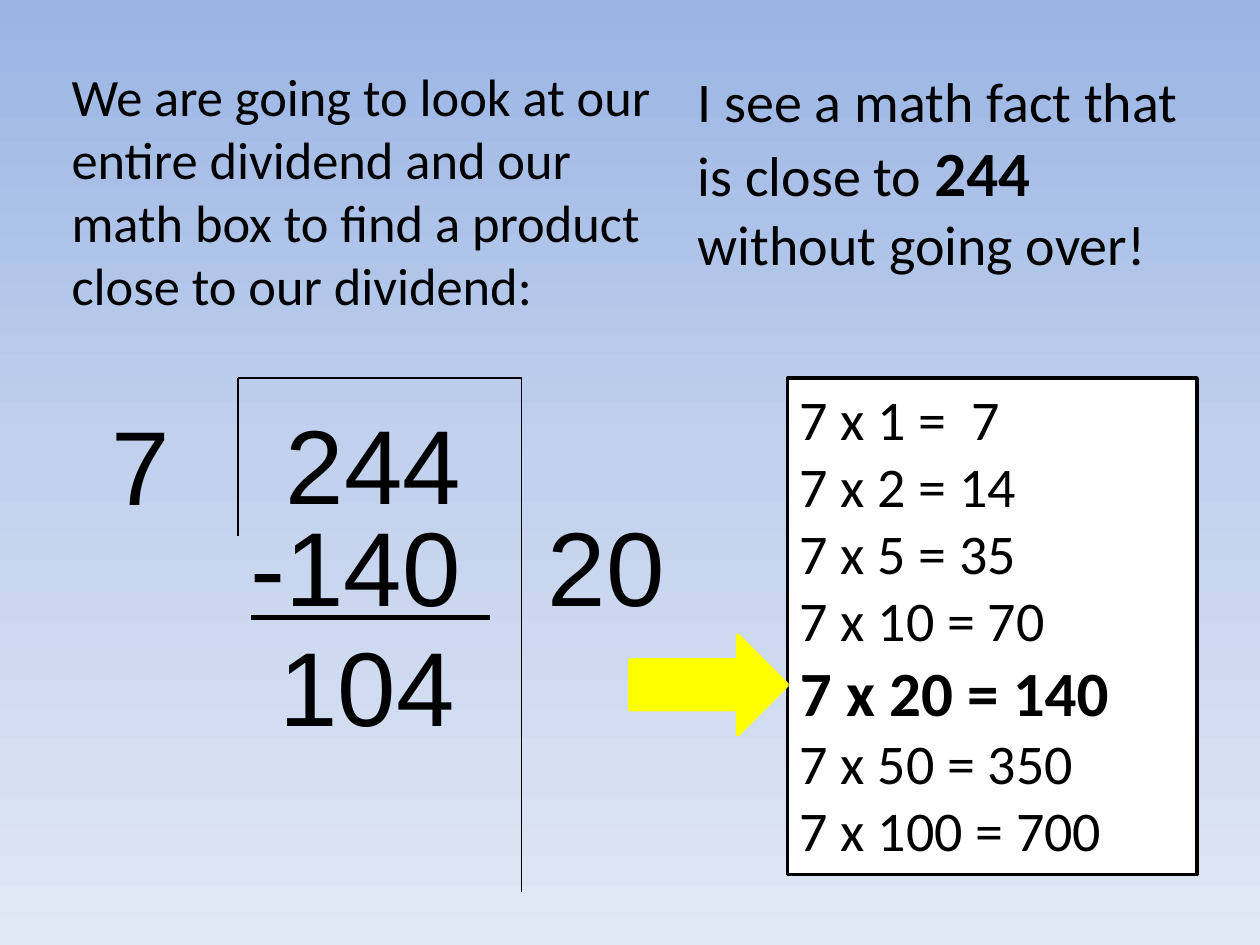
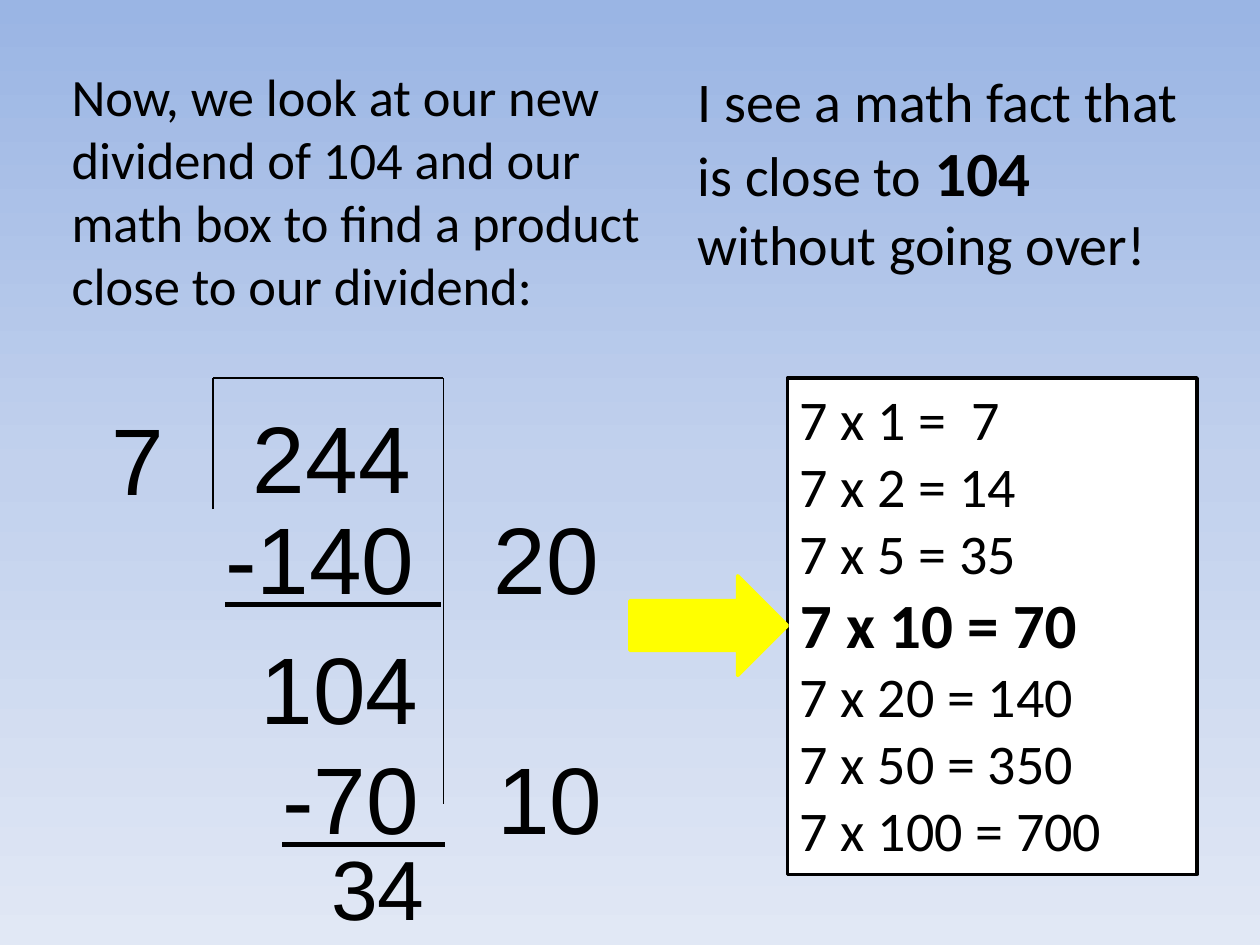
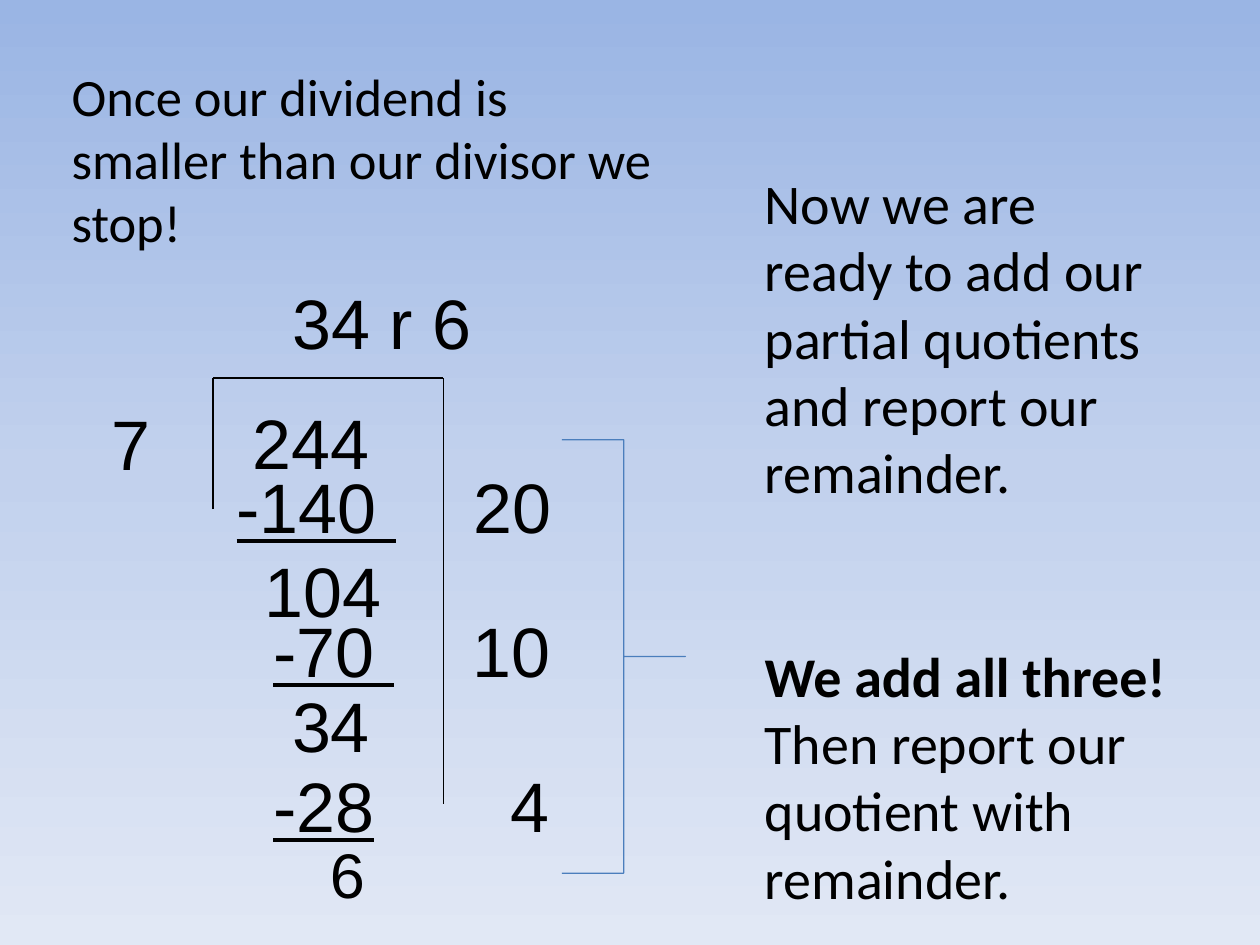
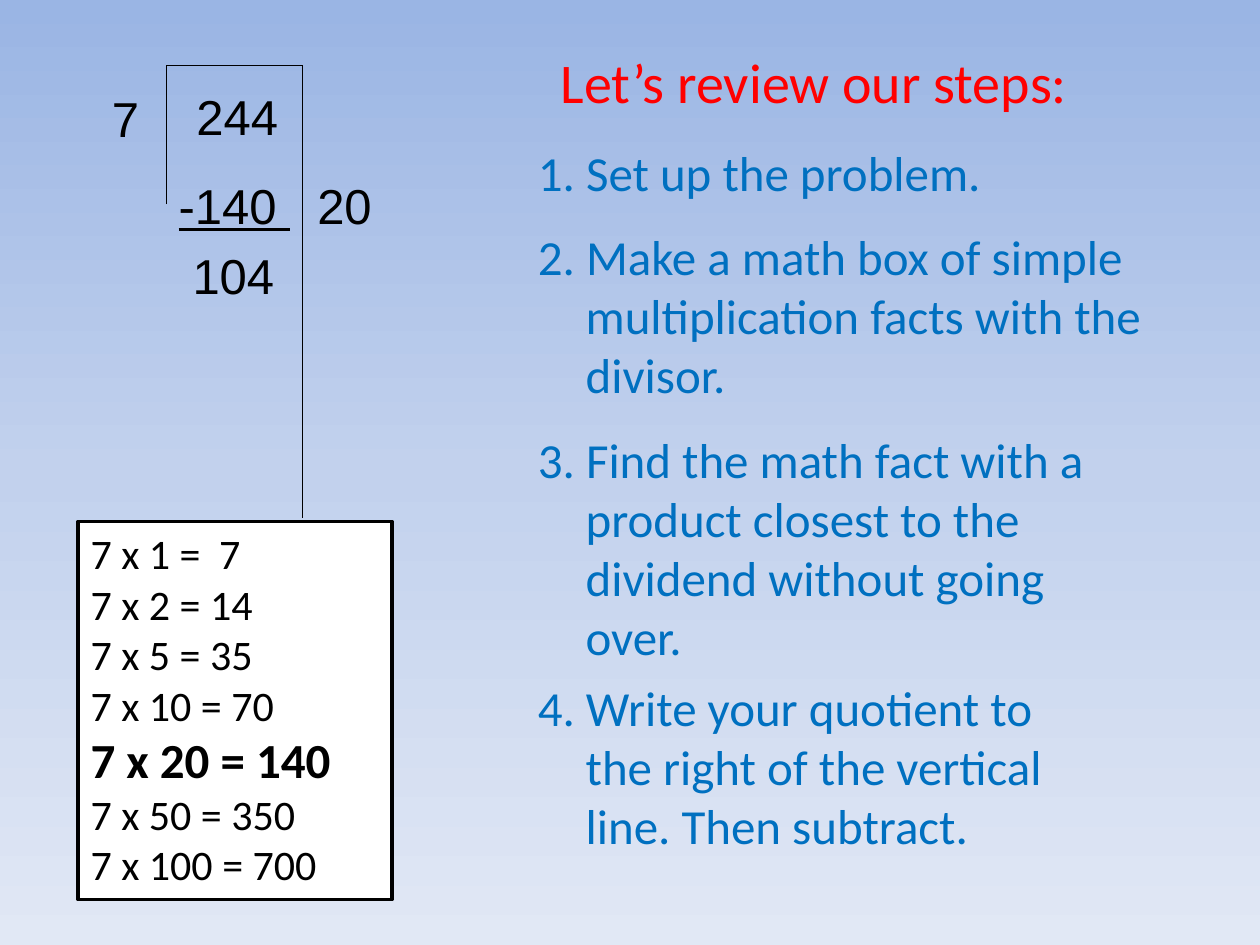
from dataclasses import dataclass

from lxml import etree
from pptx import Presentation
from pptx.dml.color import RGBColor
from pptx.enum.shapes import MSO_CONNECTOR, MSO_SHAPE
from pptx.enum.text import MSO_ANCHOR, PP_ALIGN
from pptx.oxml.ns import qn
from pptx.util import Inches, Pt

# The slide is a grid of 10 columns and 7.5 rows of square cells.
COLUMNS, ROWS = 10, 7.5
CELL = Inches(1)
BLANK_LAYOUT = 6

RECTANGLE = MSO_SHAPE.RECTANGLE
RIGHT_ARROW = MSO_SHAPE.RIGHT_ARROW
RIGHT_BRACE = MSO_SHAPE.RIGHT_BRACE
STRAIGHT = MSO_CONNECTOR.STRAIGHT
TOP = MSO_ANCHOR.TOP
LEFT, CENTER = PP_ALIGN.LEFT, PP_ALIGN.CENTER

COLORS = {
    "text": "000000", "paper": "FFFFFF", "arrow": "FFFF00",
    "brace": "4B7EBC", "title": "FF0000", "step": "0070C0",
}
BACKGROUND = {0: "9AB5E4", 50: "C2D1ED", 100: "E1E8F5"}
WORDS, DIGITS = "Calibri", "Arial"
FACTORS = (1, 2, 5, 10, 20, 50, 100)
DIVISOR, DIVIDEND = 7, 244


@dataclass(frozen=True)
class Area:
    left: float
    top: float
    width: float
    height: float

    def emu(self) -> list[int]:
        return [round(cells * CELL)
                for cells in (self.left, self.top, self.width, self.height)]


@dataclass(frozen=True)
class Span:
    text: str
    size: float = 0
    bold: bool = False
    underline: bool = False


@dataclass(frozen=True)
class Division:
    """The division frame, with the divisor outside and the dividend inside."""
    left: float
    top: float
    right: float
    bottom: float
    hook_bottom: float
    dividend_left: float
    size: float


@dataclass(frozen=True)
class WorkLine:
    """A line of the subtraction, with its partial quotient at a tab stop."""
    text: str
    left: float
    top: float
    size: float
    quotient: str = ""
    tab: float = 0


@dataclass(frozen=True)
class Step:
    text: str
    area: Area


EXPLANATION = Area(0.47, 0.46, 4.97, 2.21)
HINT = Area(5.44, 0.48, 4.06, 1.78)
LARGE_MATH_BOX = Area(6.25, 3, 3.25, 3.94)
SMALL_MATH_BOX = Area(0.62, 4.14, 2.49, 3)

STEPS = (
    Step("1. Set up the problem.", Area(4.17, 1.08, 5.25, 0.67)),
    Step("2. Make a math box of simple multiplication facts with the divisor.",
         Area(4.17, 1.75, 5.25, 1.92)),
    Step("3. Find the math fact with a product closest to the dividend "
         "without going over.", Area(4.17, 3.36, 4.71, 2.29)),
    Step("4. Write your quotient to the right of the vertical line. "
         "Then subtract.", Area(4.17, 5.33, 4.67, 1.58)),
)


def rgb(name: str) -> RGBColor:
    return RGBColor.from_string(COLORS[name])


def paint_background(master) -> None:
    fill = master.background.fill
    fill.gradient()
    fill.gradient_angle = 270
    stops = master.element.find(".//" + qn("a:gsLst"))
    for stop in list(stops):
        stops.remove(stop)
    for percent, color in BACKGROUND.items():
        stop = etree.SubElement(stops, qn("a:gs"), pos=str(percent * 1000))
        etree.SubElement(stop, qn("a:srgbClr"), val=color)


def add_para(frame, content: str | list[Span], *, size: float,
             font: str = WORDS, color: str = "text", align=LEFT,
             before: float = 0, hanging: float = 0, tab: float = 0) -> None:
    """Fill the empty first paragraph of the frame, or append a new one."""
    para = frame.paragraphs[-1]
    if para.runs:
        para = frame.add_paragraph()
    para.alignment = align
    para.space_before = Pt(before)
    properties = para._p.get_or_add_pPr()
    if hanging:
        properties.set("marL", str(round(hanging * CELL)))
        properties.set("indent", str(round(-hanging * CELL)))
    if tab:
        tabs = etree.SubElement(properties, qn("a:tabLst"))
        etree.SubElement(tabs, qn("a:tab"), pos=str(round(tab * CELL)), algn="l")
    for span in [Span(content)] if isinstance(content, str) else content:
        run = para.add_run()
        run.text = span.text
        run.font.name = font
        run.font.size = Pt(span.size or size)
        run.font.bold = span.bold
        run.font.underline = span.underline
        run.font.color.rgb = rgb(color)


def add_box(slide, area: Area):
    """Add an empty text box and return its text frame."""
    frame = slide.shapes.add_textbox(*area.emu()).text_frame
    frame.word_wrap = True
    return frame


def add_text(slide, area: Area, content: str | list[Span], **style) -> None:
    add_para(add_box(slide, area), content, **style)


def add_figure(slide, kind, area: Area, *, line: str, fill: str = "",
               width: float = 2):
    figure = slide.shapes.add_shape(kind, *area.emu())
    figure.shadow.inherit = False
    if fill:
        figure.fill.solid()
        figure.fill.fore_color.rgb = rgb(fill)
    else:
        figure.fill.background()
    figure.line.color.rgb = rgb(line)
    figure.line.width = Pt(width)
    return figure


def add_digits(slide, content: str | list[Span], left: float, top: float,
               width: float, size: float, tab: float = 0) -> None:
    height = 0.1 + 1.21 * size / 72
    add_text(slide, Area(left, top, width, height), content,
             size=size, font=DIGITS, tab=tab)


def add_division(slide, division: Division) -> None:
    corners = [(division.left, division.hook_bottom),
               (division.left, division.top),
               (division.right, division.top),
               (division.right, division.bottom)]
    for start, end in zip(corners, corners[1:]):
        line = slide.shapes.add_connector(
            STRAIGHT, *(round(cells * CELL) for cells in start + end))
        line.line.color.rgb = rgb("text")
        line.line.width = Pt(0.75)
        etree.SubElement(line._element.spPr, qn("a:effectLst"))
    size = division.size
    add_digits(slide, str(DIVIDEND), division.dividend_left,
               division.top + 0.12, size / 25, size)
    add_digits(slide, str(DIVISOR), 0.79, division.top + 0.13, size / 65, size)


def add_work(slide, lines: list[WorkLine]) -> None:
    """Write the subtraction; what is taken away is underlined."""
    for line in lines:
        spans = [Span(line.text, underline=line.text.startswith("-"))]
        if line.quotient:
            spans.append(Span("\t" + line.quotient))
        width = line.tab + line.size / 40 + 0.5
        add_digits(slide, spans, line.left, line.top, width, line.size, line.tab)


def add_math_box(slide, area: Area, size: float, chosen: int) -> None:
    """List the multiplication facts, with the chosen factor larger and bold."""
    box = add_figure(slide, RECTANGLE, area, line="text", fill="paper")
    frame = box.text_frame
    frame.word_wrap = True
    frame.vertical_anchor = TOP
    for factor in FACTORS:
        product = DIVISOR * factor
        one_digit = product < 10
        gap = "\t" if one_digit else " "
        is_chosen = factor == chosen
        fact = Span(f"{DIVISOR} x {factor} ={gap}{product}",
                    size + 4 if is_chosen else size, is_chosen)
        add_para(frame, [fact], size=size, tab=0.0425 * size if one_digit else 0)


def add_explanation(slide, text: str) -> None:
    add_text(slide, EXPLANATION, text, size=30, before=6)


def add_search(slide, dividend: int, chosen: int, arrow_top: float) -> None:
    """Add the hint, the math box and the arrow to the chosen fact."""
    hint = [Span("I see a math fact that is close to "),
            Span(f"{dividend} ", 36, True), Span("without going over!")]
    add_text(slide, HINT, hint, size=32)
    add_math_box(slide, LARGE_MATH_BOX, 32, chosen)
    add_figure(slide, RIGHT_ARROW, Area(5, arrow_top, 1.25, 0.79),
               line="arrow", fill="arrow")


def build_first_product(slide) -> None:
    add_explanation(slide, "We are going to look at our entire dividend and our "
                           "math box to find a product close to our dividend:")
    add_division(slide, Division(1.89, 3, 4.14, 7.08, 4.25, 2.17, 60))
    add_search(slide, DIVIDEND, 20, 5.04)
    add_work(slide, [WorkLine("-140 ", 1.89, 3.93, 60, "20", 2.36),
                     WorkLine("104", 2.12, 4.88, 60)])


def build_second_product(slide) -> None:
    add_explanation(slide, "Now, we look at our new dividend of 104 and our "
                           "math box to find a product close to our dividend:")
    add_division(slide, Division(1.69, 3, 3.52, 6.38, 4.04, 1.91, 54))
    add_search(slide, 104, 10, 4.57)
    add_work(slide, [WorkLine("-140 ", 1.69, 3.92, 54, "20", 2.13),
                     WorkLine("104", 1.97, 4.95, 54),
                     WorkLine("-70 ", 2.14, 5.82, 54, "10", 1.71),
                     WorkLine("34", 2.53, 6.59, 48)])


def build_quotient(slide) -> None:
    add_explanation(slide, "Once our dividend is smaller than our divisor we stop!")
    add_division(slide, Division(1.69, 3, 3.52, 6.38, 4.04, 1.91, 40))
    add_work(slide, [WorkLine("-140 ", 1.78, 3.63, 40, "20", 1.88),
                     WorkLine("104", 2, 4.3, 40),
                     WorkLine("-70 ", 2.07, 4.77, 40, "10", 1.58),
                     WorkLine("34", 2.22, 5.37, 40),
                     WorkLine("-28", 2.07, 6, 40, "4", 1.88),
                     WorkLine("6", 2.52, 6.58, 36)])
    frame = add_box(slide, Area(5.97, 1.29, 3.42, 6.02))
    add_para(frame, "Now we are ready to add our partial quotients and report "
                    "our remainder.", size=32)
    add_para(frame, [Span("We add all three!", bold=True)], size=32, before=78)
    add_para(frame, "Then report our quotient with remainder.", size=32)
    brace = add_figure(slide, RIGHT_BRACE, Area(4.46, 3.49, 0.98, 3.44),
                       line="brace", width=0.75)
    brace.adjustments[0] = 0
    brace.adjustments[1] = 0.5
    add_digits(slide, "34 r 6", 2.22, 2.17, 1.75, 40)


def build_review(slide) -> None:
    add_text(slide, Area(4.17, 0.33, 4.58, 0.58), "Let’s review our steps:",
             size=32, color="title", align=CENTER, before=6.4, hanging=0.38)
    for step in STEPS:
        add_text(slide, step.area, step.text, size=28, color="step",
                 before=5.6, hanging=0.38)
    add_math_box(slide, SMALL_MATH_BOX, 24, 20)
    add_division(slide, Division(1.32, 0.52, 2.4, 4.11, 1.62, 1.46, 28))
    add_work(slide, [WorkLine("-140 ", 1.32, 1.34, 28, "20", 1.1),
                     WorkLine("104", 1.43, 1.9, 28)])


def main() -> None:
    deck = Presentation()
    deck.slide_width = round(COLUMNS * CELL)
    deck.slide_height = round(ROWS * CELL)
    paint_background(deck.slide_master)
    for build in (build_first_product, build_second_product,
                  build_quotient, build_review):
        build(deck.slides.add_slide(deck.slide_layouts[BLANK_LAYOUT]))
    deck.save("out.pptx")


if __name__ == "__main__":
    main()
